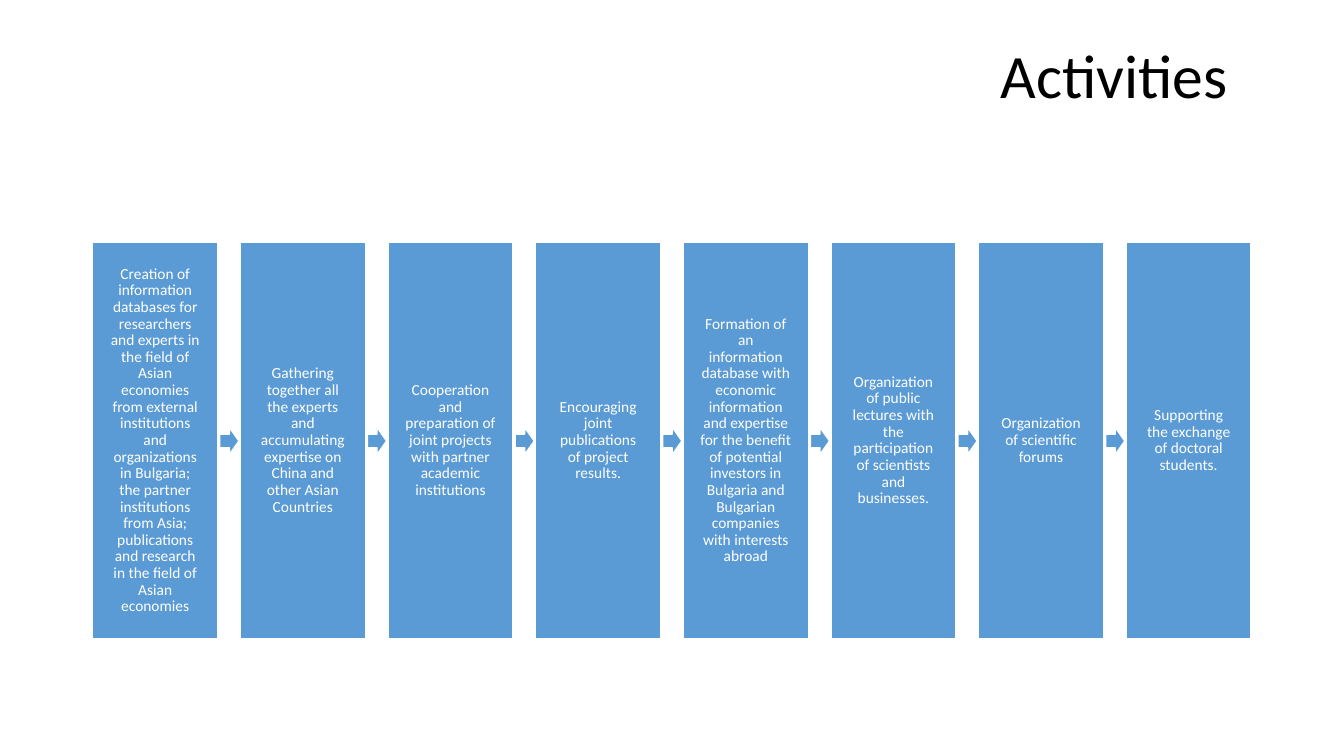
import pptx
import pptx.util
import pptx.dml.color
import pptx.enum.shapes
import pptx.enum.text
from dataclasses import dataclass

Inches = pptx.util.Inches
Pt = pptx.util.Pt
Color = pptx.dml.color.RGBColor.from_string
Kind = pptx.enum.shapes.MSO_SHAPE
Align = pptx.enum.text.PP_ALIGN
Anchor = pptx.enum.text.MSO_ANCHOR


@dataclass
class Theme:
    font: str = "Calibri"
    ink: str = "000000"
    blue: str = "5B9BD5"
    white: str = "FFFFFF"
    title: int = 44
    body: int = 11


theme = Theme()

steps = [
    "Creation of information databases for researchers and experts in the field of "
    "Asian economies from external institutions and organizations in Bulgaria; the "
    "partner institutions from Asia; publications and research in the field of Asian economies",
    "Gathering together all the experts and accumulating expertise on China and other "
    "Asian Countries",
    "Cooperation and preparation of joint projects with partner academic institutions",
    "Encouraging joint publications of project results.",
    "Formation of an information database with economic information and expertise for "
    "the benefit of potential investors in Bulgaria and Bulgarian companies with "
    "interests abroad",
    "Organization of public lectures with the participation of scientists and businesses.",
    "Organization of scientific forums",
    "Supporting the exchange of doctoral students.",
]


def write(shape, text, size, color, align, anchor):
    frame = shape.text_frame
    frame.word_wrap = True
    frame.vertical_anchor = anchor
    frame.text = text
    para = frame.paragraphs[0]
    para.alignment = align
    para.line_spacing = 0.9
    font = para.runs[0].font
    font.name = theme.font
    font.size = Pt(size)
    font.color.rgb = Color(color)


def block(kind, left, top, width, height):
    """Add a blue shape with a thin white outline."""
    shape = slide.shapes.add_shape(
        kind, Inches(left), Inches(top), Inches(width), Inches(height))
    shape.shadow.inherit = False
    shape.fill.solid()
    shape.fill.fore_color.rgb = Color(theme.blue)
    shape.line.color.rgb = Color(theme.white)
    shape.line.width = Pt(1)
    return shape


deck = pptx.Presentation()
deck.slide_width = Inches(13.33)
deck.slide_height = Inches(7.5)
slide = deck.slides.add_slide(deck.slide_layouts[6])

title = slide.shapes.add_textbox(Inches(0.92), Inches(0.4), Inches(11.5), Inches(1.45))
write(title, "Activities", theme.title, theme.ink, Align.RIGHT, Anchor.TOP)
title.text_frame.margin_right = Inches(0.24)

# Eight equal cards, with an arrow in each gap
first, last, top = 0.92, 11.17, 2.4
wide, high = 1.24, 3.94
pitch = (last - first) / (len(steps) - 1)

for i, step in enumerate(steps):
    left = first + i * pitch
    card = block(Kind.RECTANGLE, left, top, wide, high)
    write(card, step, theme.body, theme.white, Align.CENTER, Anchor.MIDDLE)
    frame = card.text_frame
    frame.margin_left = frame.margin_right = Inches(0.17)
    frame.margin_top = frame.margin_bottom = Inches(0.17)
    if i < len(steps) - 1:
        block(Kind.RIGHT_ARROW, left + wide + 0.02, 4.24, 0.19, 0.27)

deck.save("out.pptx")
